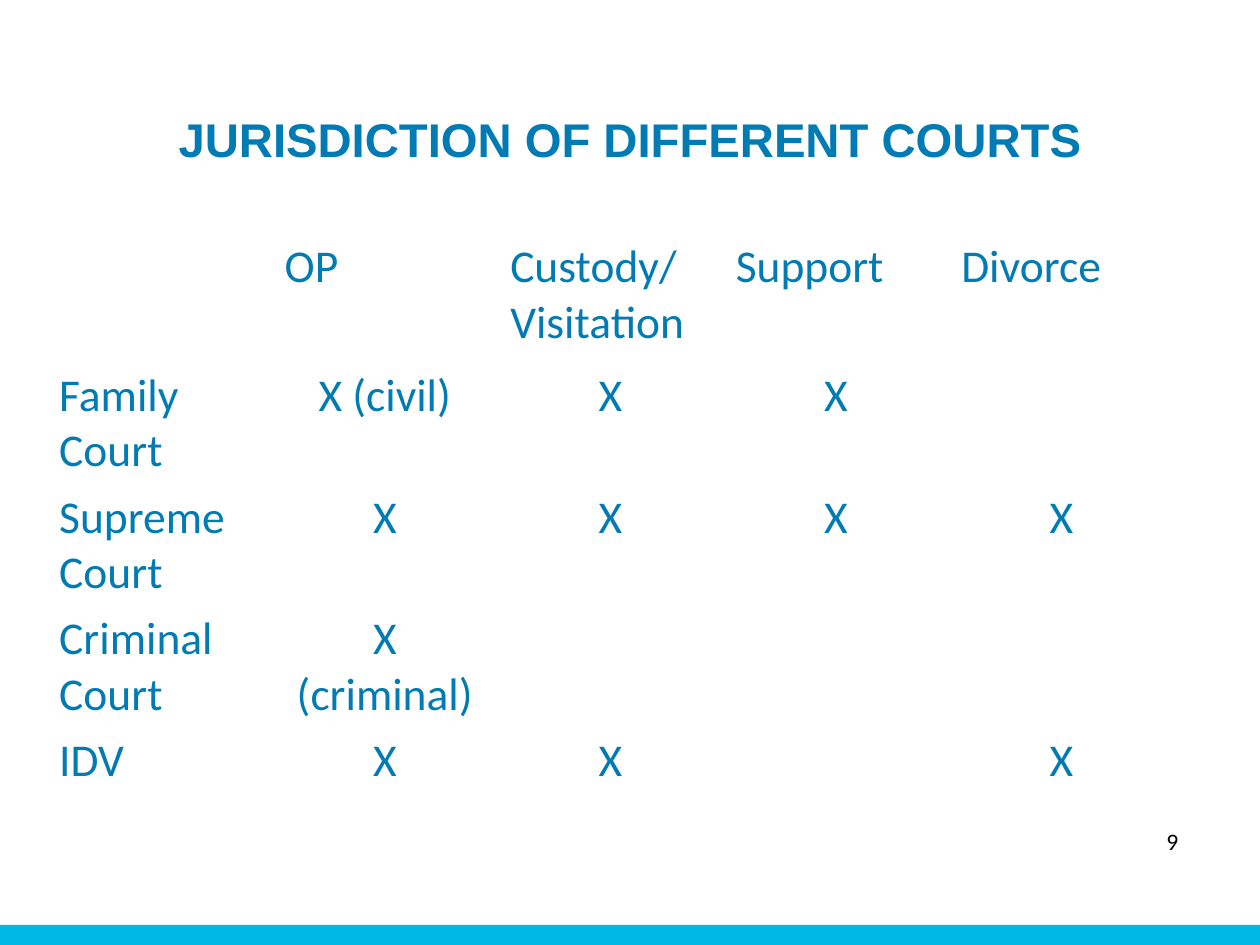
from dataclasses import dataclass

from pptx import Presentation
from pptx.dml.color import RGBColor
from pptx.enum.shapes import MSO_SHAPE
from pptx.enum.text import MSO_ANCHOR, PP_ALIGN
from pptx.util import Inches, Pt

RECTANGLE = MSO_SHAPE.RECTANGLE
TOP, MIDDLE = MSO_ANCHOR.TOP, MSO_ANCHOR.MIDDLE
LEFT, CENTER = PP_ALIGN.LEFT, PP_ALIGN.CENTER

TITLE_FONT = {"name": "Arial", "size": Pt(27), "bold": True}
TABLE_FONT = {"name": "Calibri", "size": Pt(26), "bold": False}
NUMBER_FONT = {"name": "Calibri", "size": Pt(13.5), "bold": False}
BLUE, CYAN, BLACK = "007BB3", "00B8E5", "000000"

COLUMN_WIDTH = 1.79
HEADER_HEIGHT, COURT_HEIGHT, LAST_HEIGHT = 1.02, 0.93, 0.56


@dataclass
class Box:
    left: float
    top: float
    width: float
    height: float

    def lengths(self) -> list:
        return [Inches(v) for v in (self.left, self.top, self.width, self.height)]


@dataclass
class Court:
    name: str
    powers: tuple
    height: float = COURT_HEIGHT


@dataclass
class Label:
    text: str
    box: Box
    font: dict
    color: str
    align: int = LEFT
    anchor: int = TOP
    spacing: float = 1.0


HEADER = ("", "OP", "Custody/Visitation", "Support", "Divorce")
COURTS = [
    Court("Family Court", ("X (civil)", "X", "X", "")),
    Court("Supreme Court", ("X", "X", "X", "X")),
    Court("Criminal Court", ("X (criminal)", "", "", "")),
    Court("IDV", ("X", "X", "", "X"), LAST_HEIGHT),
]
LABELS = [
    Label("JURISDICTION OF DIFFERENT COURTS", Box(0.69, 0.4, 8.62, 1.45),
          TITLE_FONT, BLUE, CENTER, MIDDLE, 0.9),
    Label("9", Box(9.16, 6.51, 0.84, 0.4), NUMBER_FONT, BLACK),
]


def rgb(value: str) -> RGBColor:
    return RGBColor.from_string(value)


def write(frame, text: str, font: dict, color: str, align: int) -> None:
    paragraph = frame.paragraphs[0]
    paragraph.text = text
    paragraph.alignment = align
    for key, value in font.items():
        setattr(paragraph.font, key, value)
    paragraph.font.color.rgb = rgb(color)


def draw_label(slide, label: Label) -> None:
    frame = slide.shapes.add_textbox(*label.box.lengths()).text_frame
    frame.word_wrap = True
    frame.vertical_anchor = label.anchor
    write(frame, label.text, label.font, label.color, label.align)
    frame.paragraphs[0].line_spacing = label.spacing


def draw_footer_band(slide, box: Box) -> None:
    band = slide.shapes.add_shape(RECTANGLE, *box.lengths())
    band.shadow.inherit = False
    band.fill.solid()
    band.fill.fore_color.rgb = rgb(CYAN)
    band.line.fill.background()


def draw_jurisdictions(slide, left: float, top: float) -> None:
    heights = [HEADER_HEIGHT, *(court.height for court in COURTS)]
    rows = [HEADER, *((court.name, *court.powers) for court in COURTS)]
    box = Box(left, top, COLUMN_WIDTH * len(HEADER), sum(heights))
    table = slide.shapes.add_table(len(rows), len(HEADER), *box.lengths()).table
    table.first_row = False
    table.horz_banding = False
    for column in table.columns:
        column.width = Inches(COLUMN_WIDTH)
    for r, (texts, height) in enumerate(zip(rows, heights)):
        table.rows[r].height = Inches(height)
        for c, text in enumerate(texts):
            cell = table.cell(r, c)
            cell.fill.background()
            align = CENTER if r and c else LEFT
            write(cell.text_frame, text, TABLE_FONT, BLUE, align)


def main() -> None:
    deck = Presentation()
    deck.slide_width, deck.slide_height = Inches(10), Inches(7.5)
    slide = deck.slides.add_slide(deck.slide_layouts[6])
    draw_footer_band(slide, Box(0, 7.34, 10, 0.16))
    for label in LABELS:
        draw_label(slide, label)
    draw_jurisdictions(slide, 0.37, 1.85)
    deck.save("out.pptx")


if __name__ == "__main__":
    main()
